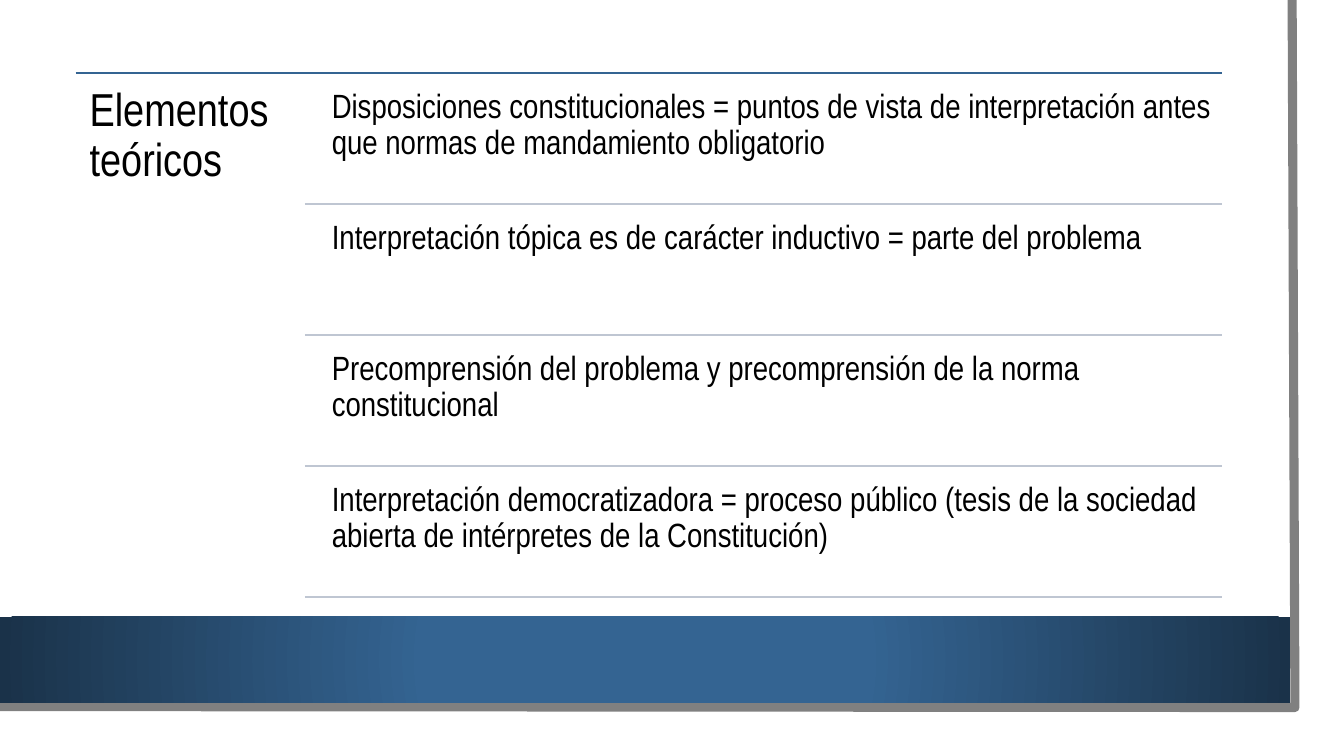
from dataclasses import dataclass

from lxml.etree import SubElement
from pptx import Presentation
from pptx.dml.color import RGBColor
from pptx.enum.shapes import MSO_CONNECTOR, MSO_SHAPE
from pptx.enum.text import MSO_ANCHOR, MSO_AUTO_SIZE, PP_ALIGN
from pptx.oxml.ns import qn
from pptx.util import Pt


@dataclass(frozen=True)
class Theme:
    font: str = "Arial Narrow"
    head: float = 33
    body: float = 24
    rule: float = 1.5
    edge: float = 6.5
    ink: RGBColor = RGBColor(0, 0, 0)
    blue: RGBColor = RGBColor(0x34, 0x64, 0x92)
    navy: RGBColor = RGBColor(0x1A, 0x32, 0x49)
    pale: RGBColor = RGBColor(0xBF, 0xC6, 0xD2)
    gray: RGBColor = RGBColor(0x80, 0x80, 0x80)


THEME = Theme()
HEAD = "Elementos teóricos"
ITEMS = [
    "Disposiciones constitucionales = puntos de vista de interpretación "
    "antes que normas de mandamiento obligatorio",
    "Interpretación tópica es de carácter inductivo = parte del problema",
    "Precomprensión del problema y precomprensión de la norma constitucional",
    "Interpretación democratizadora = proceso público (tesis de la sociedad "
    "abierta de intérpretes de la Constitución)",
]


def write(frame, text, size, inset):
    """Fill a text frame with one paragraph, set from the top left."""
    frame.word_wrap = True
    frame.auto_size = MSO_AUTO_SIZE.NONE
    frame.vertical_anchor = MSO_ANCHOR.TOP
    frame.margin_left = frame.margin_right = Pt(inset)
    frame.margin_top = frame.margin_bottom = Pt(inset)
    para = frame.paragraphs[0]
    para.alignment = PP_ALIGN.LEFT
    para.line_spacing = 0.9
    run = para.add_run()
    run.text = text
    run.font.name = THEME.font
    run.font.size = Pt(size)
    run.font.color.rgb = THEME.ink


def add_rule(slide, left, right, top, color):
    line = slide.shapes.add_connector(
        MSO_CONNECTOR.STRAIGHT, Pt(left), Pt(top), Pt(right), Pt(top))
    line.line.color.rgb = color
    line.line.width = Pt(THEME.rule)
    SubElement(line._element.spPr, qn("a:effectLst"))


def add_edge(slide, width, height):
    """Gray edge along the right and bottom of the page."""
    pen = slide.shapes.build_freeform(Pt(width - 2), Pt(0))
    pen.add_line_segments(
        [(Pt(width), Pt(height)), (Pt(0), Pt(height - 0.7))], close=False)
    edge = pen.convert_to_shape()
    edge.shadow.inherit = False
    edge.fill.background()
    edge.line.color.rgb = THEME.gray
    edge.line.width = Pt(THEME.edge)


def add_band(slide, left, top, width, height):
    """Blue band with a gradient that darkens away from its centre."""
    band = slide.shapes.add_shape(
        MSO_SHAPE.RECTANGLE, Pt(left), Pt(top), Pt(width), Pt(height))
    band.shadow.inherit = False
    band.line.fill.background()
    band.fill.gradient()
    marks = [(0.34, THEME.blue), (1, THEME.navy)]
    for stop, (place, color) in zip(band.fill.gradient_stops, marks):
        stop.position = place
        stop.color.rgb = color
    grad = band._element.spPr.find(qn("a:gradFill"))
    grad.remove(grad.find(qn("a:lin")))
    round_ = SubElement(grad, qn("a:path"), {"path": "circle"})
    SubElement(round_, qn("a:fillToRect"),
               {side: "50000" for side in "ltrb"})


def add_list(slide, left, top, width, height):
    """Title in the left fifth, ruled items in the rest."""
    right = left + width
    side = width / 5
    gap = 4.5
    inner = left + side + 12.2
    step = height / len(ITEMS)

    # Title and top rule
    add_rule(slide, left, right, top, THEME.blue)
    title = slide.shapes.title
    title.left, title.top = Pt(left), Pt(top)
    title.width, title.height = Pt(side), Pt(height)
    write(title.text_frame, HEAD, THEME.head, 10)

    # Items, each closed by a rule
    for row, text in enumerate(ITEMS):
        start = top + row * step
        box = slide.shapes.add_textbox(
            Pt(inner), Pt(start + gap), Pt(right - inner), Pt(step - gap))
        write(box.text_frame, text, THEME.body, 7.2)
        add_rule(slide, left + side, right, start + step, THEME.pale)


def main():
    deck = Presentation()
    deck.slide_width, deck.slide_height = Pt(960), Pt(540)
    slide = deck.slides.add_slide(deck.slide_layouts[5])
    add_edge(slide, 925, 505.4)
    add_band(slide, 0, 440.6, 921.6, 61.4)
    add_list(slide, 54, 52, 818.6, 374.4)
    deck.save("out.pptx")


if __name__ == "__main__":
    main()
